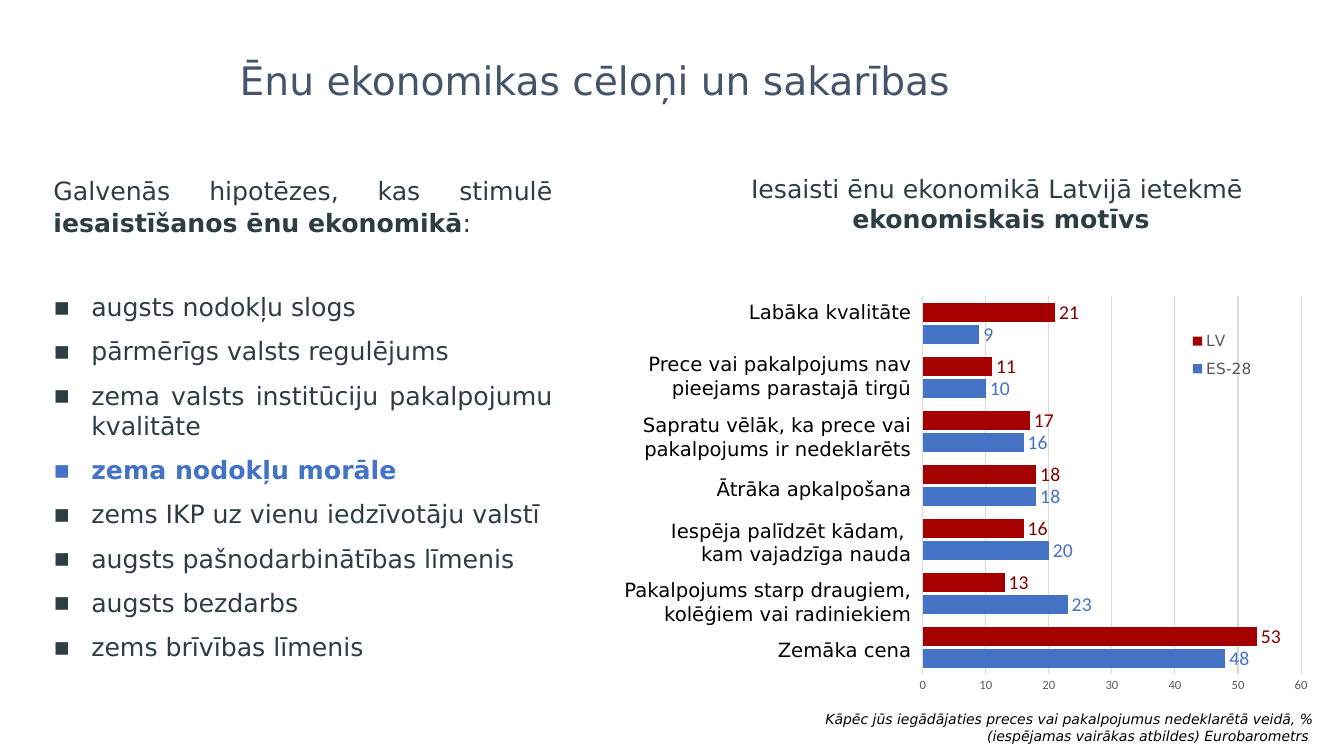
"""Build a slide on the causes of the shadow economy, with hypotheses and a bar chart."""
from lxml.etree import SubElement
from pptx import Presentation
from pptx.chart.data import CategoryChartData
from pptx.dml.color import RGBColor
from pptx.enum.chart import XL_CHART_TYPE, XL_LABEL_POSITION, XL_LEGEND_POSITION, XL_TICK_MARK
from pptx.enum.text import MSO_ANCHOR, MSO_AUTO_SIZE, PP_ALIGN
from pptx.oxml import parse_xml
from pptx.oxml.ns import nsdecls, qn
from pptx.util import Pt

COLORS = {
    "title": "44546A", "text": "2C3E44", "blue": "4472C4", "red": "A40000",
    "value": "800000", "black": "000000", "gray": "595959", "grid": "D9D9D9",
}
SANS = "DejaVu Sans"


def style(font, size, color, name=SANS):
    font.size, font.name = Pt(size), name
    font.color.rgb = RGBColor.from_string(COLORS[color])


def write(frame, lines, size, color, align):
    for i, line in enumerate(lines):
        para = frame.paragraphs[0] if i == 0 else frame.add_paragraph()
        para.alignment = align
        for text, bold in line:
            run = para.add_run()
            run.text = text
            if len(line) > 1:
                run.font.bold = bold
        style(para.font, size, color)
        if len(line) == 1:
            para.font.bold = line[0][1]
    return frame.paragraphs


deck = Presentation()
deck.slide_width, deck.slide_height = Pt(960), Pt(540)
slide = deck.slides.add_slide(deck.slide_layouts[1])

title, body = slide.placeholders
title.left, title.top, title.width, title.height = Pt(164), Pt(26.5), Pt(780), Pt(66)
title.text_frame.vertical_anchor = MSO_ANCHOR.MIDDLE
head = write(title.text_frame, [[("Ēnu ekonomikas cēloņi un sakarības", False)]],
             28, "title", PP_ALIGN.LEFT)[0]
head.line_spacing = 0.9

body.left, body.top, body.width, body.height = Pt(31), Pt(120), Pt(371), Pt(385)
body.text_frame.auto_size = MSO_AUTO_SIZE.NONE
causes = [
    "augsts nodokļu slogs", "pārmērīgs valsts regulējums",
    "zema valsts institūciju pakalpojumu kvalitāte", "zema nodokļu morāle",
    "zems IKP uz vienu iedzīvotāju valstī", "augsts pašnodarbinātības līmenis",
    "augsts bezdarbs", "zems brīvības līmenis",
]
key = "zema nodokļu morāle"
intro = [("Galvenās hipotēzes, kas stimulē ", False),
         ("iesaistīšanos ēnu ekonomikā", True), (":", False)]

lead = body.text_frame.paragraphs[0]
lead_props = lead._p.get_or_add_pPr()
lead_props.set("marL", "0")
lead_props.set("indent", "0")
SubElement(lead_props, qn("a:buNone"))
paras = write(body.text_frame, [intro], 18, "text", PP_ALIGN.JUSTIFY)
lead.line_spacing, lead.space_before, lead.space_after = 1.07, Pt(0), Pt(38.4)

for cause in causes:
    para = body.text_frame.add_paragraph()
    para.text = cause
    para.alignment = PP_ALIGN.JUSTIFY
    para.space_before, para.space_after = Pt(0), Pt(10)
    props = para._p.get_or_add_pPr()
    props.set("marL", str(Pt(27)))
    props.set("indent", str(-Pt(27)))
    SubElement(props, qn("a:buFont")).set("typeface", SANS)
    SubElement(props, qn("a:buChar")).set("char", "▪")
    style(para.font, 18, "blue" if cause == key else "text")
    para.font.bold = cause == key

motive = slide.shapes.add_textbox(Pt(498), Pt(120), Pt(434), Pt(51)).text_frame
motive.word_wrap = True
write(motive, [[("Iesaisti ēnu ekonomikā Latvijā ietekmē ", False)],
               [("ekonomiskais motīvs", True)]], 18, "text", PP_ALIGN.CENTER)

data = CategoryChartData()
data.categories = [str(n) for n in range(1, 8)]
data.add_series("ES-28", (48, 23, 20, 18, 16, 10, 9))
data.add_series("LV", (53, 13, 16, 18, 17, 11, 21))
chart = slide.shapes.add_chart(XL_CHART_TYPE.BAR_CLUSTERED, Pt(646), Pt(198),
                               Pt(299), Pt(327), data).chart
style(chart.font, 10, "black", "Calibri")
chart.has_title = False
chart.category_axis.visible = False

axis = chart.value_axis
axis.minimum_scale, axis.maximum_scale, axis.major_unit = 0, 60, 10
axis.major_tick_mark = axis.minor_tick_mark = XL_TICK_MARK.NONE
axis.format.line.fill.background()
style(axis.tick_labels.font, 9, "gray", "Calibri")
grid = axis.major_gridlines.format.line
grid.width = Pt(0.75)
grid.color.rgb = RGBColor.from_string(COLORS["grid"])

plot = chart.plots[0]
plot.gap_width, plot.overlap, plot.vary_by_categories = 74, -19, False
for series, fill, ink in zip(plot.series, ("blue", "red"), ("blue", "value")):
    series.format.fill.solid()
    series.format.fill.fore_color.rgb = RGBColor.from_string(COLORS[fill])
    labels = series.data_labels
    labels.show_value = True
    labels.position = XL_LABEL_POSITION.OUTSIDE_END
    style(labels.font, 14, ink, "Calibri")

chart.has_legend = True
legend = chart.legend
legend.position = XL_LEGEND_POSITION.BOTTOM
legend.include_in_layout = False
style(legend.font, 11, "gray")

area = chart._chartSpace.chart.plotArea
for old in area.findall(qn("c:layout")):
    area.remove(old)
for old in legend._element.findall(qn("c:layout")):
    legend._element.remove(old)
spots = [
    (area, 0, '<c:layoutTarget val="inner"/>', (0.044, 0.042, 0.904, 0.826)),
    (legend._element, 1, "", (0.66, 0.1, 0.2, 0.14)),
]
for node, place, target, (x, y, w, h) in spots:
    node.insert(place, parse_xml(
        f'<c:layout {nsdecls("c")}><c:manualLayout>{target}'
        '<c:xMode val="edge"/><c:yMode val="edge"/>'
        f'<c:x val="{x}"/><c:y val="{y}"/><c:w val="{w}"/><c:h val="{h}"/>'
        '</c:manualLayout></c:layout>'))

reasons = [
    ("Labāka kvalitāte", 20),
    ("Prece vai pakalpojums nav pieejams parastajā tirgū", 10),
    ("Sapratu vēlāk, ka prece vai pakalpojums ir nedeklarēts", 12),
    ("Ātrāka apkalpošana", 13),
    ("Iespēja palīdzēt kādam, ", 0),
    ("kam vajadzīga nauda", 9),
    ("Pakalpojums starp draugiem, kolēģiem vai radiniekiem", 9),
    ("Zemāka cena", 0),
]
names = slide.shapes.add_textbox(Pt(432), Pt(211), Pt(226), Pt(274)).text_frame
names.word_wrap = True
rows = write(names, [[(text, False)] for text, gap in reasons], 14, "black", PP_ALIGN.RIGHT)
for row, (text, gap) in zip(rows, reasons):
    row.space_after = Pt(gap)

source = slide.shapes.add_textbox(Pt(574), Pt(504), Pt(371), Pt(32)).text_frame
source.word_wrap = False
notes = ["Kāpēc jūs iegādājaties preces vai pakalpojumus nedeklarētā veidā, %",
         "(iespējamas vairākas atbildes) Eurobarometrs "]
for para in write(source, [[(note, False)] for note in notes], 10, "black", PP_ALIGN.RIGHT):
    para.font.italic = True

deck.save("out.pptx")
